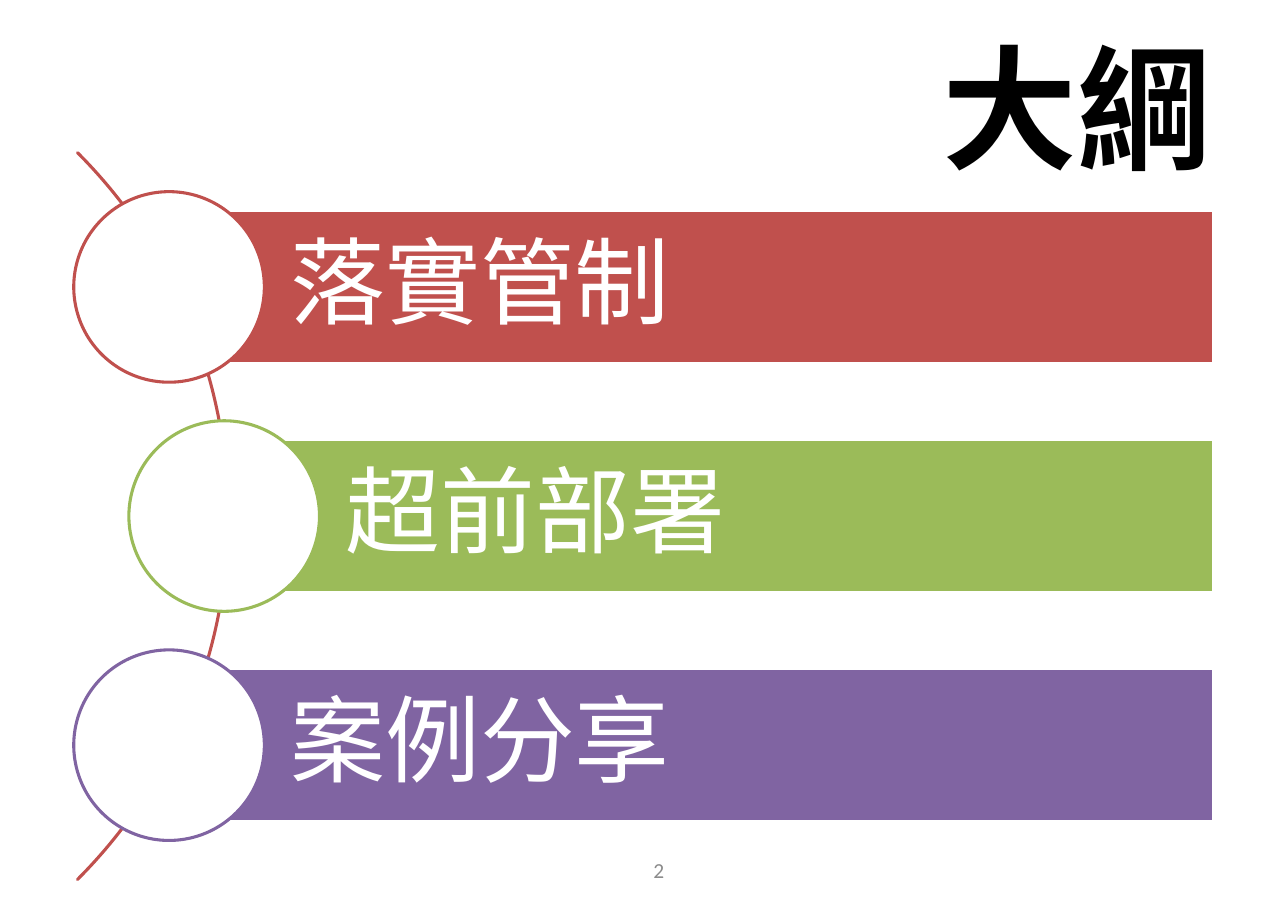
from dataclasses import dataclass

from pptx import Presentation
from pptx.dml.color import RGBColor
from pptx.enum.shapes import MSO_SHAPE
from pptx.enum.text import MSO_ANCHOR, PP_ALIGN
from pptx.shapes.autoshape import Shape
from pptx.slide import Slide
from pptx.util import Inches, Pt

RECT, OVAL, ARC = MSO_SHAPE.RECTANGLE, MSO_SHAPE.OVAL, MSO_SHAPE.BLOCK_ARC
LEFT, RIGHT = PP_ALIGN.LEFT, PP_ALIGN.RIGHT
MIDDLE = MSO_ANCHOR.MIDDLE

W, H = Inches(11.69), Inches(8.27)
FONT = "Calibri"
COLORS = {
    "red": "C0504D",
    "green": "9BBB59",
    "purple": "8064A2",
    "white": "FFFFFF",
    "black": "000000",
    "gray": "8C8C8C",
}

MID_ROW, ROW_PITCH = 56.65, 25.15
OUTER_COL, INNER_COL, BAR_RIGHT = 13.13, 17.41, 94.2
BAR_HEIGHT, CIRCLE_SIZE = 16.81, 20.92
ARC_CENTER, ARC_SIZE = -22.2, 112.82


@dataclass
class Topic:
    text: str
    color: str
    col: float


@dataclass
class Label:
    text: str
    left: float
    top: float
    width: float
    height: float
    size: int
    color: str
    bold: bool


TOPICS = [
    Topic("落實管制", "red", OUTER_COL),
    Topic("超前部署", "green", INNER_COL),
    Topic("案例分享", "purple", OUTER_COL),
]
LABELS = [
    Label("大綱", 4.96, 2.42, 90.08, 18.26, 88, "black", True),
    Label("2", 29.17, 92.87, 23.35, 5.32, 14, "gray", False),
]


def x(share: float) -> int:
    return round(W * share / 100)


def y(share: float) -> int:
    return round(H * share / 100)


def rgb(name: str) -> RGBColor:
    return RGBColor.from_string(COLORS[name])


def add_outlined(s: Slide, kind: MSO_SHAPE, left: int, top: int, width: int,
                 height: int, line: str, fill: str | None = None) -> Shape:
    sp = s.shapes.add_shape(kind, left, top, width, height)
    sp.shadow.inherit = False
    sp.line.color.rgb = rgb(line)
    sp.line.width = Pt(2)
    if fill:
        sp.fill.solid()
        sp.fill.fore_color.rgb = rgb(fill)
    else:
        sp.fill.background()
    return sp


def add_round(s: Slide, kind: MSO_SHAPE, col: float, row: float, size: float,
              line: str, fill: str | None = None) -> Shape:
    d = y(size)
    return add_outlined(s, kind, x(col) - d // 2, y(row) - d // 2, d, d, line, fill)


def write(sp: Shape, text: str, size: int, color: str, align: PP_ALIGN,
          insets: tuple[int, int, int, int], bold: bool = False) -> None:
    tf = sp.text_frame
    tf.text = text
    tf.word_wrap = True
    tf.vertical_anchor = MIDDLE
    tf.margin_left, tf.margin_top, tf.margin_right, tf.margin_bottom = insets
    p = tf.paragraphs[0]
    p.alignment = align
    r = p.runs[0]
    r.font.name = FONT
    r.font.size = Pt(size)
    r.font.bold = bold
    r.font.color.rgb = rgb(color)


def add_label(s: Slide, label: Label) -> None:
    sp = s.shapes.add_textbox(x(label.left), y(label.top), x(label.width), y(label.height))
    insets = (x(0.94), y(0.73), x(0.94), y(0.73))
    write(sp, label.text, label.size, label.color, RIGHT, insets, label.bold)


def add_topic(s: Slide, topic: Topic, row: float) -> None:
    sp = add_outlined(s, RECT, x(topic.col), y(row - BAR_HEIGHT / 2),
                      x(BAR_RIGHT - topic.col), y(BAR_HEIGHT), "white", topic.color)
    pad = x(1.45)
    write(sp, topic.text, 62, "white", LEFT, (x(9.41), pad, pad, pad))
    p = sp.text_frame.paragraphs[0]
    p.line_spacing = 0.9
    p.space_after = Pt(21.7)
    add_round(s, OVAL, topic.col, row, CIRCLE_SIZE, topic.color, "white")


def main() -> None:
    prs = Presentation()
    prs.slide_width, prs.slide_height = W, H
    s = prs.slides.add_slide(prs.slide_layouts[6])

    arc = add_round(s, ARC, ARC_CENTER, MID_ROW, ARC_SIZE, "red")
    for i, value in enumerate((189, 27, 0)):
        arc.adjustments[i] = value

    for i, topic in enumerate(TOPICS):
        add_topic(s, topic, MID_ROW + (i - 1) * ROW_PITCH)
    for label in LABELS:
        add_label(s, label)

    prs.save("out.pptx")


if __name__ == "__main__":
    main()
